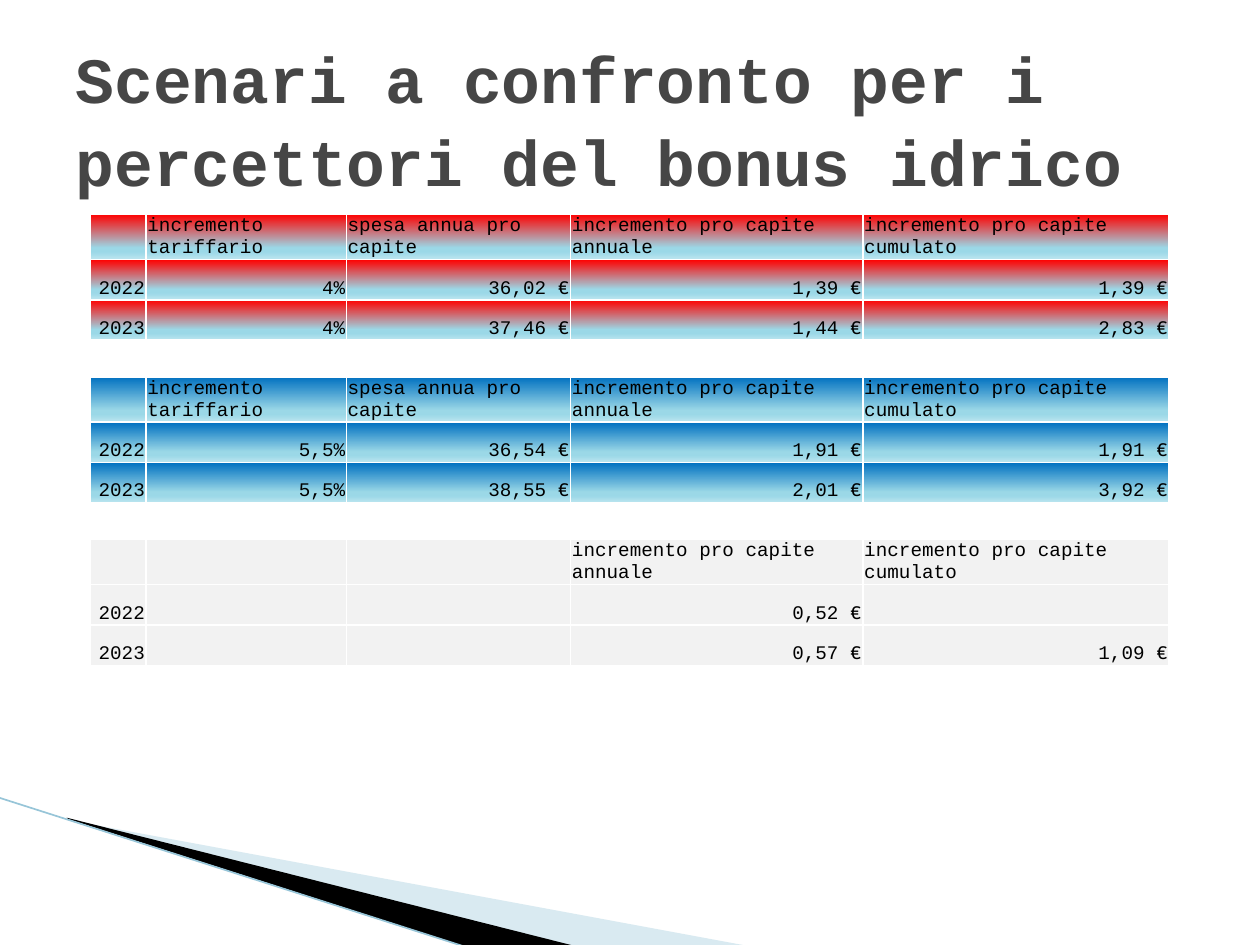
from lxml.etree import SubElement
from pptx import Presentation
from pptx.dml.color import RGBColor
from pptx.enum.text import MSO_ANCHOR, MSO_AUTO_SIZE, PP_ALIGN
from pptx.oxml.ns import qn
from pptx.util import Inches, Pt

FONT = "Courier New"
COLORS = {
    "title": "464646", "text": "000000", "border": "FFFFFF",
    "red": "FF0000", "blue": "0070C0", "mid": "9BD8E7", "pale": "BCE5EF",
    "gray": "F2F2F2", "wedge": "A0CBDC", "black": "000000", "line": "97C5D8",
}
COL_WIDTHS = [0.44, 1.59, 1.78, 2.32, 2.43]
ROW_HEIGHTS = [0.29, 0.32, 0.32]
HEADERS = ["", "incremento tariffario", "spesa annua pro capite",
           "incremento pro capite annuale", "incremento pro capite cumulato"]
SCENARIOS = [
    ("red", [HEADERS,
             ["2022", "4%", "36,02 €", "1,39 €", "1,39 €"],
             ["2023", "4%", "37,46 €", "1,44 €", "2,83 €"]]),
    ("blue", [HEADERS,
              ["2022", "5,5%", "36,54 €", "1,91 €", "1,91 €"],
              ["2023", "5,5%", "38,55 €", "2,01 €", "3,92 €"]]),
    ("gray", [["", "", ""] + HEADERS[3:],
              ["2022", "", "", "0,52 €", ""],
              ["2023", "", "", "0,57 €", "1,09 €"]]),
]


def rgb(name):
    return RGBColor.from_string(COLORS[name])


def add_solid(parent, name):
    fill = SubElement(parent, qn("a:solidFill"))
    return SubElement(fill, qn("a:srgbClr"), val=COLORS[name])


def set_font(font, size, color, bold=False):
    font.name, font.size, font.bold = FONT, Pt(size), bold
    font.color.rgb = rgb(color)


def add_title(s, text, x, y, w, h):
    sp = s.shapes.title
    sp.left, sp.top, sp.width, sp.height = map(Inches, (x, y, w, h))
    tf = sp.text_frame
    tf.text = text
    tf.word_wrap = True
    tf.auto_size = MSO_AUTO_SIZE.NONE
    tf.vertical_anchor = MSO_ANCHOR.MIDDLE
    p = tf.paragraphs[0]
    p.alignment = PP_ALIGN.LEFT
    p.line_spacing = 1.07
    set_font(p.runs[0].font, 36.9, "title", bold=True)


def add_borders(cell):
    tc_pr = cell._tc.get_or_add_tcPr()
    for side in ("lnL", "lnR", "lnT", "lnB"):
        add_solid(SubElement(tc_pr, qn(f"a:{side}"), w=str(Pt(1))), "border")


def fill_gradient(cell, top):
    grad = SubElement(cell._tc.get_or_add_tcPr(), qn("a:gradFill"))
    stops = SubElement(grad, qn("a:gsLst"))
    for pos, name in ((0, top), (74, "mid"), (83, "mid"), (100, "pale")):
        stop = SubElement(stops, qn("a:gs"), pos=str(pos * 1000))
        SubElement(stop, qn("a:srgbClr"), val=COLORS[name])
    SubElement(grad, qn("a:lin"), ang=str(90 * 60000), scaled="0")


def format_cell(cell, text, color, is_header):
    cell.margin_left = cell.margin_right = cell.margin_top = Inches(0.01)
    cell.margin_bottom = 0
    cell.vertical_anchor = MSO_ANCHOR.BOTTOM
    add_borders(cell)
    if color == "gray":
        cell.fill.solid()
        cell.fill.fore_color.rgb = rgb(color)
    else:
        fill_gradient(cell, color)
    p = cell.text_frame.paragraphs[0]
    p.text = text
    p.alignment = PP_ALIGN.LEFT if is_header else PP_ALIGN.RIGHT
    for r in p.runs:
        set_font(r.font, 11, "text")
    if not text:  # keeps empty cells from stretching their row
        SubElement(p._p, qn("a:endParaRPr"), sz="1100")


def add_scenario(s, color, rows, x, y):
    frame = s.shapes.add_table(len(rows), len(COL_WIDTHS), Inches(x), Inches(y),
                               Inches(sum(COL_WIDTHS)), Inches(sum(ROW_HEIGHTS)))
    table = frame.table
    table.horz_banding = False
    for col, width in zip(table.columns, COL_WIDTHS):
        col.width = Inches(width)
    for row, height in zip(table.rows, ROW_HEIGHTS):
        row.height = Inches(height)
    for i, row in enumerate(rows):
        for j, text in enumerate(row):
            format_cell(table.cell(i, j), text, color, i == 0)


def add_wedge(s, points, color, alpha=None):
    start, *rest = [(Inches(x), Inches(y)) for x, y in points]
    builder = s.shapes.build_freeform(*start)
    builder.add_line_segments(rest, close=True)
    sp = builder.convert_to_shape()
    sp.shadow.inherit = False
    sp.line.fill.background()
    sp.fill.solid()
    sp.fill.fore_color.rgb = rgb(color)
    if alpha is not None:
        clr = sp._element.spPr.find(f"{qn('a:solidFill')}/{qn('a:srgbClr')}")
        SubElement(clr, qn("a:alpha"), val=str(alpha * 1000))


def add_corner(s, x, y):
    """Sweeping wedges and edge line, from the line's left end at x, y."""
    def at(*offsets):
        return [(x + dx, y + dy) for dx, dy in offsets]

    add_wedge(s, at((0.56, 0.18), (5.96, 1.18), (4.57, 1.18), (0.56, 0.17)), "wedge", 40)
    add_wedge(s, at((0.54, 0.16), (4.58, 1.18), (3.73, 1.19), (0.55, 0.17)), "black")
    line = s.shapes.add_connector(1, Inches(x), Inches(y), Inches(x + 3.72), Inches(y + 1.19))
    line.line.color.rgb = rgb("line")
    line.line.width = Pt(0.95)
    SubElement(line._element.spPr, qn("a:effectLst"))


def main():
    prs = Presentation()
    prs.slide_width, prs.slide_height = Inches(10), Inches(7.5)
    s = prs.slides.add_slide(prs.slide_layouts[5])

    # Corner decoration
    add_corner(s, -0.01, 6.33)

    # Title
    add_title(s, "Scenari a confronto per i percettori del bonus idrico", 0.5, 0.3, 9, 1.25)

    # Two scenarios and their difference, evenly stacked
    for i, (color, rows) in enumerate(SCENARIOS):
        add_scenario(s, color, rows, 0.72, 1.7 + 1.29 * i)

    prs.save("out.pptx")


if __name__ == "__main__":
    main()
